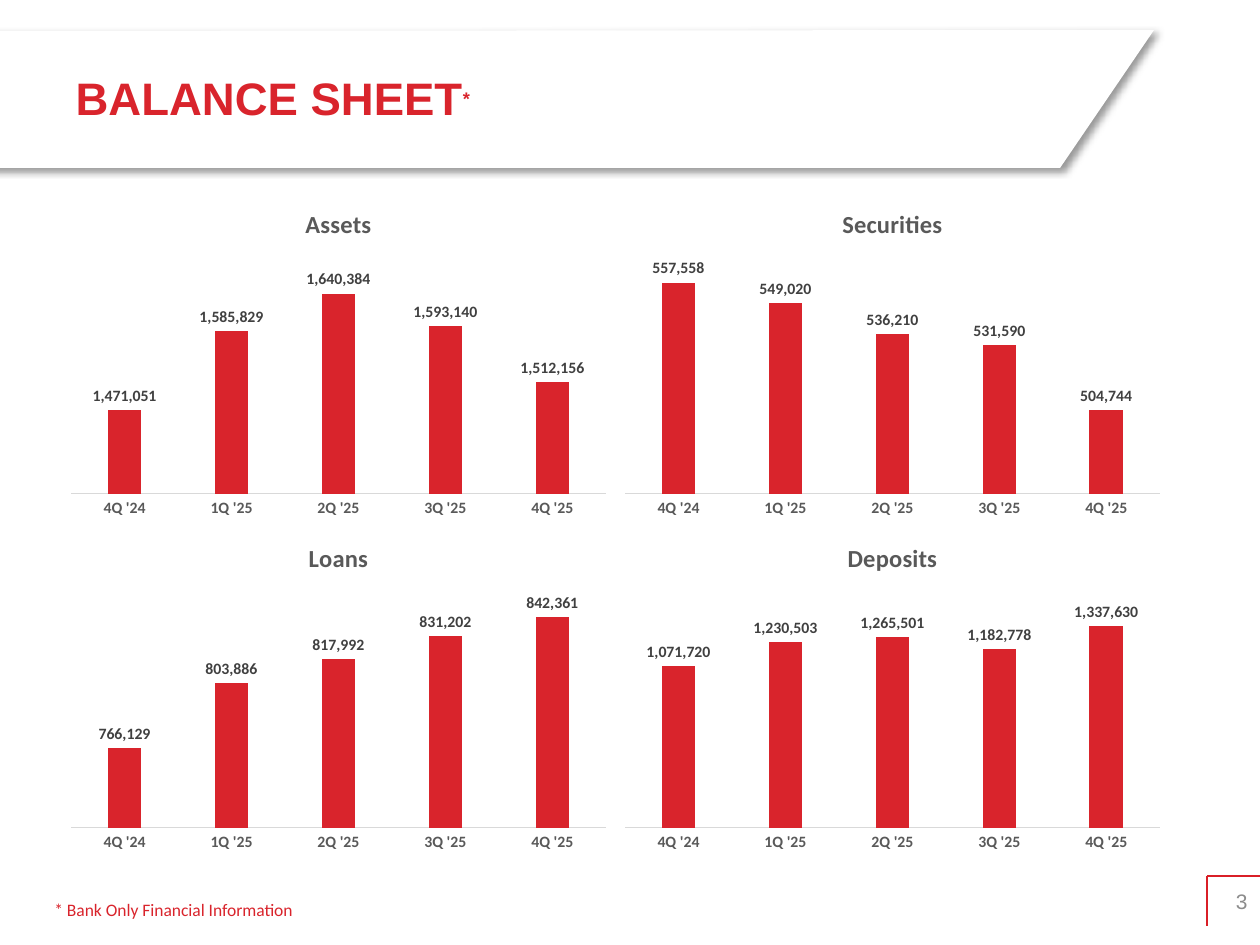
from lxml import etree
from pptx import Presentation
from pptx.chart.data import CategoryChartData
from pptx.dml.color import RGBColor
from pptx.enum.chart import XL_CHART_TYPE, XL_LABEL_POSITION, XL_TICK_MARK
from pptx.enum.shapes import MSO_CONNECTOR
from pptx.enum.text import MSO_ANCHOR, PP_ALIGN
from pptx.oxml import parse_xml
from pptx.oxml.ns import nsdecls, qn
from pptx.util import Pt

COLUMN = XL_CHART_TYPE.COLUMN_CLUSTERED
OUTSIDE_END = XL_LABEL_POSITION.OUTSIDE_END
NO_TICK = XL_TICK_MARK.NONE
STRAIGHT = MSO_CONNECTOR.STRAIGHT
MIDDLE = MSO_ANCHOR.MIDDLE
LEFT, RIGHT = PP_ALIGN.LEFT, PP_ALIGN.RIGHT

EMU_PER_PX = 914400 / 126
RED, RULE_RED, WHITE = "D9242C", "D91F27", "FFFFFF"
TEXT_GREY, LABEL_GREY, AXIS_GREY, NUMBER_GREY = "595959", "404040", "D9D9D9", "8C8C8C"
NUMBER_FORMAT = '_(* #,##0_);_(* \\(#,##0\\);_(* "-"??_);_('

QUARTERS = ["4Q '24", "1Q '25", "2Q '25", "3Q '25", "4Q '25"]
# title, values, axis minimum, axis maximum
CHARTS = [
    ("Assets", [1471051, 1585829, 1640384, 1593140, 1512156], 1350000, 1700000),
    ("Securities", [557558, 549020, 536210, 531590, 504744], 470000, 570000),
    ("Loans", [766129, 803886, 817992, 831202, 842361], 720000, 860000),
    ("Deposits", [1071720, 1230503, 1265501, 1182778, 1337630], 0, 1600000),
]
PLOT_LAYOUT = {"x": 0.02, "y": 0.19, "w": 0.96, "h": 0.72}


def px(n):
    return round(n * EMU_PER_PX)


def rgb(color):
    return RGBColor.from_string(color)


def style_font(font, size, color, name="Calibri", bold=False):
    font.name, font.size, font.bold = name, Pt(size), bold
    font.color.rgb = rgb(color)


class SlideBuilder:
    def __init__(self, prs):
        self.s = prs.slides.add_slide(prs.slide_layouts[5])

    def banner(self, points):
        """Draw a white outline with a soft shadow behind the title."""
        start, *rest = [(px(x), px(y)) for x, y in points]
        builder = self.s.shapes.build_freeform(*start)
        builder.add_line_segments(rest, close=True)
        sp = builder.convert_to_shape()
        sp.fill.solid()
        sp.fill.fore_color.rgb = rgb(WHITE)
        sp.line.fill.background()
        sp._element.spPr.append(parse_xml(
            f'<a:effectLst {nsdecls("a")}><a:outerShdw blurRad="50800" dist="38100" '
            'dir="2700000" algn="tl" rotWithShape="0"><a:srgbClr val="000000">'
            '<a:alpha val="40000"/></a:srgbClr></a:outerShdw></a:effectLst>'))
        self.s.shapes.title._element.addprevious(sp._element)

    def rule(self, x1, y1, x2, y2):
        line = self.s.shapes.add_connector(STRAIGHT, px(x1), px(y1), px(x2), px(y2))
        line.line.color.rgb = rgb(RULE_RED)
        line.line.width = Pt(0.75)
        etree.SubElement(line._element.spPr, qn("a:effectLst"))

    def title(self, x, y, w, h, text, mark):
        sp = self.s.shapes.title
        sp.left, sp.top, sp.width, sp.height = px(x), px(y), px(w), px(h)
        sp.text_frame.vertical_anchor = MIDDLE
        p = sp.text_frame.paragraphs[0]
        p.alignment = LEFT
        for part, size in ((text, 26), (mark, 18)):
            r = p.add_run()
            r.text = part
            style_font(r.font, size, RED, "Arial", True)
        r.font._element.set("baseline", "30000")

    def text(self, x, y, w, h, text, size, color, name="Calibri", align=LEFT, wrap=True):
        tf = self.s.shapes.add_textbox(px(x), px(y), px(w), px(h)).text_frame
        tf.word_wrap = wrap
        tf.vertical_anchor = MIDDLE
        p = tf.paragraphs[0]
        p.text = text
        p.alignment = align
        style_font(p.font, size, color, name)

    def chart(self, x, y, w, h, title, values, low, high):
        data = CategoryChartData(number_format=NUMBER_FORMAT)
        data.categories = QUARTERS
        data.add_series(title, values)
        chart = self.s.shapes.add_chart(COLUMN, px(x), px(y), px(w), px(h), data).chart
        style_font(chart.font, 10, "000000")
        chart.has_legend = False
        chart.has_title = True
        p = chart.chart_title.text_frame.paragraphs[0]
        p.text = title
        style_font(p.font, 14, TEXT_GREY, bold=True)

        axis = chart.category_axis
        axis.major_tick_mark = axis.minor_tick_mark = NO_TICK
        axis.format.line.color.rgb = rgb(AXIS_GREY)
        axis.format.line.width = Pt(0.75)
        style_font(axis.tick_labels.font, 9, TEXT_GREY, bold=True)
        value_axis = chart.value_axis
        value_axis.minimum_scale, value_axis.maximum_scale = low, high
        value_axis.has_major_gridlines = False
        value_axis.visible = False

        plot = chart.plots[0]
        plot.gap_width, plot.overlap = 219, -27
        plot.vary_by_categories = False
        series = plot.series[0]
        series.format.fill.solid()
        series.format.fill.fore_color.rgb = rgb(RED)
        labels = series.data_labels
        labels.show_value = True
        labels.position = OUTSIDE_END
        labels.number_format, labels.number_format_is_linked = NUMBER_FORMAT, False
        style_font(labels.font, 9, LABEL_GREY, bold=True)
        self.fix_plot_area(chart)

    def fix_plot_area(self, chart):
        """Give every chart the same inner plot area, as fractions of its frame."""
        area = chart._chartSpace.chart.plotArea
        for old in area.findall(qn("c:layout")):
            area.remove(old)
        layout = etree.Element(qn("c:layout"))
        manual = etree.SubElement(layout, qn("c:manualLayout"))
        settings = {"layoutTarget": "inner", "xMode": "edge", "yMode": "edge", **PLOT_LAYOUT}
        for tag, value in settings.items():
            etree.SubElement(manual, qn(f"c:{tag}")).set("val", str(value))
        area.insert(0, layout)


def main():
    prs = Presentation()
    prs.slide_width, prs.slide_height = px(1260), px(945)
    slide = SlideBuilder(prs)
    slide.banner([(-21, 31), (1154, 30), (1060, 168), (-21, 168)])
    slide.rule(1207, 876, 1207, 926)
    slide.rule(1260, 876, 1207, 876)
    slide.text(1207, 876, 53, 50, "3", 12, NUMBER_GREY, "Arial", RIGHT)
    slide.title(63, 32, 998, 130, "BALANCE SHEET", "*")
    slide.text(42, 892, 267, 34, "* Bank Only Financial Information", 10, RED, wrap=False)
    for i, content in enumerate(CHARTS):
        row, col = divmod(i, 2)
        slide.chart(60 + 554 * col, 189 + 334 * row, 557, 335, *content)
    prs.save("out.pptx")


if __name__ == "__main__":
    main()
